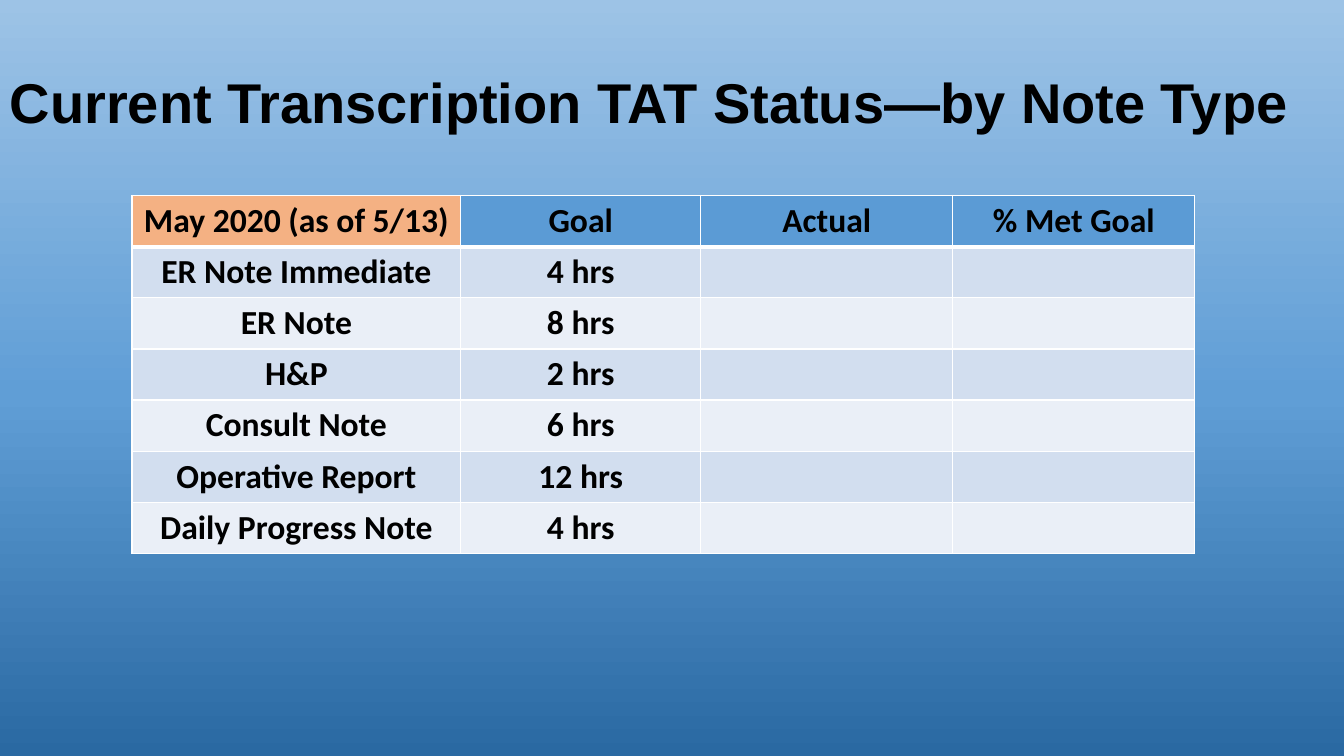
from copy import deepcopy

from lxml import etree
from pptx import Presentation
from pptx.dml.color import RGBColor
from pptx.enum.text import MSO_ANCHOR as Anchor, PP_ALIGN as Align
from pptx.oxml.ns import qn
from pptx.util import Inches, Pt

TITLE = "Current Transcription TAT Status—by Note Type"
HEADER = ["May 2020 (as of 5/13)", "Goal", "Actual", "% Met Goal"]
GOALS = [
    ("ER Note Immediate", "4 hrs"),
    ("ER Note", "8 hrs"),
    ("H&P", "2 hrs"),
    ("Consult Note", "6 hrs"),
    ("Operative Report", "12 hrs"),
    ("Daily Progress Note", "4 hrs"),
]
COL_WIDTHS = [3.26, 2.38, 2.5, 2.4]
ROW_HEIGHT = 0.5
COLORS = {
    "text": "000000", "border": "FFFFFF",
    "month": "F4B183", "header": "5B9BD5",
    "odd": "D2DEEF", "even": "EAEFF7",
}
GRADIENT = [(0, "2A69A2"), (0.48, "609ED6"), (1, "9DC3E6")]


def add_run(p, text, size, font):
    r = p.add_run()
    r.text = text
    r.font.size, r.font.name, r.font.bold = Pt(size), font, True
    r.font.color.rgb = RGBColor.from_string(COLORS["text"])


def set_borders(cell, bottom, top):
    tc_pr = cell._tc.get_or_add_tcPr()
    widths = {"a:lnL": 1, "a:lnR": 1, "a:lnT": top, "a:lnB": bottom}
    for i, (tag, width) in enumerate(widths.items()):
        ln = etree.Element(qn(tag), w=str(Pt(width)))
        fill = etree.SubElement(ln, qn("a:solidFill"))
        etree.SubElement(fill, qn("a:srgbClr"), val=COLORS["border"])
        tc_pr.insert(i, ln)


prs = Presentation()
prs.slide_width, prs.slide_height = Inches(13.33), Inches(7.5)
s = prs.slides.add_slide(prs.slide_layouts[6])

# Background gradient, dark at the bottom
bg = s.background.fill
bg.gradient()
bg.gradient_angle = 90
stops = s.element.find(".//" + qn("a:gsLst"))
stops.append(deepcopy(stops[0]))
for stop, (position, color) in zip(bg.gradient_stops, GRADIENT):
    stop.position = position
    stop.color.rgb = RGBColor.from_string(color)

# Turnaround table
rows = [HEADER] + [[*goal, "", ""] for goal in GOALS]
table = s.shapes.add_table(
    len(rows), len(HEADER), Inches(1.31), Inches(1.94),
    Inches(sum(COL_WIDTHS)), Inches(ROW_HEIGHT * len(rows))).table
for col, width in zip(table.columns, COL_WIDTHS):
    col.width = Inches(width)
for i, row in enumerate(rows):
    table.rows[i].height = Inches(ROW_HEIGHT)
    for j, text in enumerate(row):
        cell = table.cell(i, j)
        if i == 0:
            fill = "header" if j else "month"
            cell.vertical_anchor = Anchor.MIDDLE
        else:
            fill = "odd" if i % 2 else "even"
        cell.fill.solid()
        cell.fill.fore_color.rgb = RGBColor.from_string(COLORS[fill])
        set_borders(cell, bottom=1 if i else 3, top=3 if i == 1 else 1)
        p = cell.text_frame.paragraphs[0]
        p.alignment = Align.CENTER
        if text:
            add_run(p, text, 24, "Calibri")

# Title
sp = s.shapes.add_textbox(0, Inches(0.62), Inches(12.91), Inches(0.77))
tf = sp.text_frame
tf.word_wrap = True
add_run(tf.paragraphs[0], TITLE, 40, "Arial")

prs.save("out.pptx")
